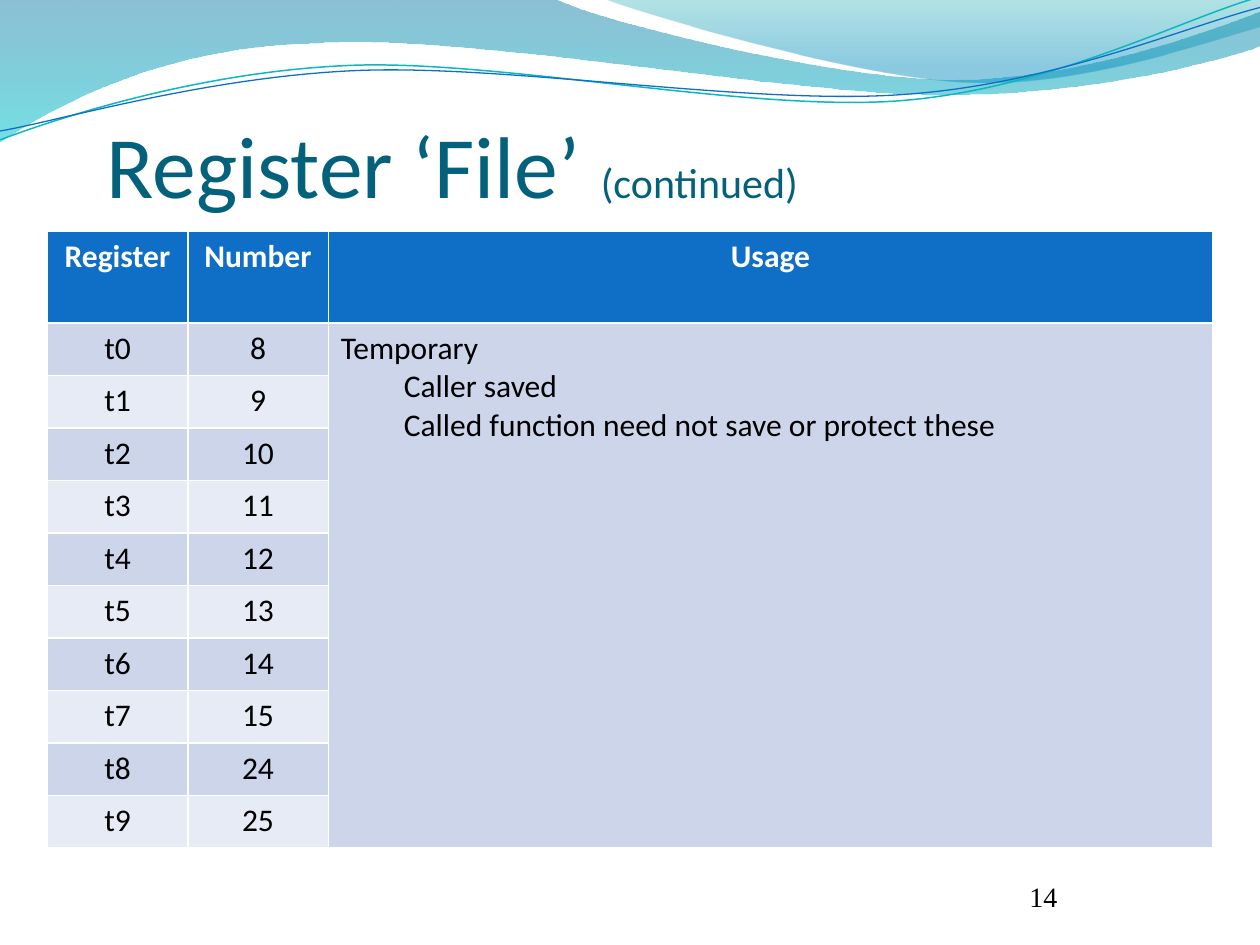
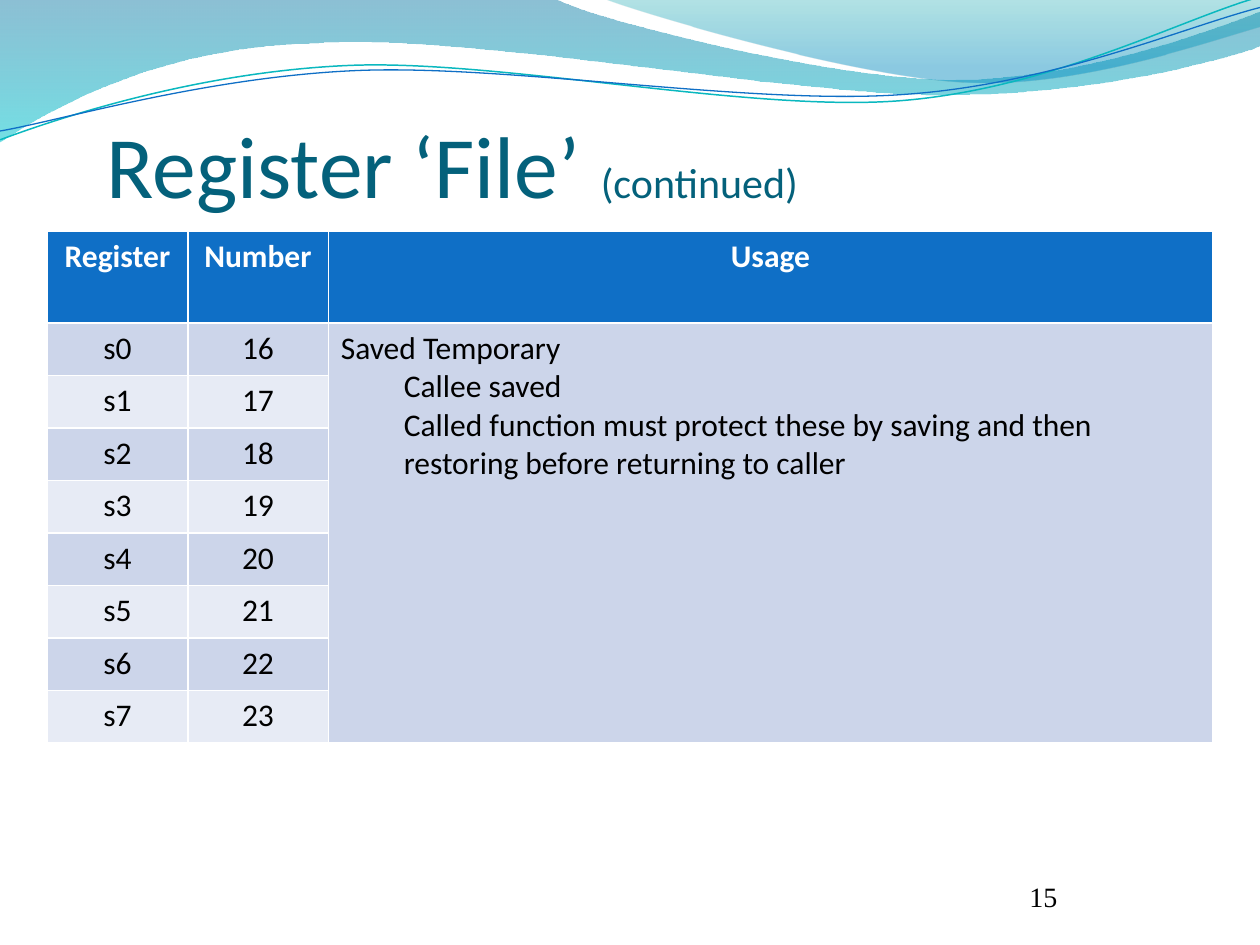
"""Build two slides listing the temporary and saved registers."""
from math import cos, radians, sin

from lxml import etree
from pptx import Presentation
from pptx.dml.color import RGBColor
from pptx.enum.text import MSO_ANCHOR, PP_ALIGN
from pptx.oxml.ns import qn
from pptx.util import Inches, Pt

BODY_FONT, NUMBER_FONT = "Calibri", "Times New Roman"
TITLE, BLUE, TEAL = "04617B", "0F6FC6", "0AB8BF"
WHITE, BLACK = "FFFFFF", "000000"
BANDS = ["CCD5EA", "E7EBF5"]
HEADINGS = ["Register", "Number", "Usage"]
TABLE_LEFT, TABLE_TOP, TABLE_WIDTH = 3 / 8, 11 / 6, 9.25
USAGE_WIDTH = 7.02
NARROW_WIDTH = (TABLE_WIDTH - USAGE_WIDTH) / 2
COLUMN_WIDTHS = [NARROW_WIDTH, NARROW_WIDTH, USAGE_WIDTH]
HEADER_HEIGHT, ROW_HEIGHT = 0.73, 5 / 12
UNITS_PER_INCH = 1000
CURVE_TILT = 2.7

WIDE_WAVE = [
    [(0, 0)], [(4.4, -0.01)],
    [(4.76, 0.17), (6.64, 0.63), (7.58, 0.63)],
    [(8.53, 0.63), (9.58, 0.26), (10, 0.09)],
    [(10.01, 0.36)],
    [(9.83, 0.44), (8.7, 0.76), (7.46, 0.75)],
    [(6.22, 0.75), (3.82, 0.28), (2.57, 0.34)],
    [(1.29, 0.36), (0.46, 0.83), (-0.01, 1.13)],
    [(0, 0)],
]
RIGHT_WAVE = [
    [(4.79, -0.01)],
    [(5.09, 0.11), (6.82, 0.62), (7.69, 0.65)],
    [(8.56, 0.69), (9.61, 0.32), (10, 0.21)],
    [(10, 0)], [(4.79, -0.01)],
]
TEAL_CURVE = [
    [(0, 1.11)],
    [(0.48, 0.93), (1.58, 0.57), (2.77, 0.52)],
    [(3.95, 0.47), (5.93, 0.89), (7.13, 0.8)],
    [(8.33, 0.71), (9.38, 0.15), (9.98, -0.02)],
]
BLUE_CURVE = [
    [(0, 1.04)],
    [(0.47, 0.96), (1.64, 0.61), (2.83, 0.56)],
    [(4.03, 0.51), (5.97, 0.84), (7.17, 0.75)],
    [(8.36, 0.67), (9.41, 0.21), (10, 0.06)],
]


def color(hex_text):
    """Return the colour for a hex string."""
    return RGBColor.from_string(hex_text)


def set_font(font, size, hex_text, name=BODY_FONT, bold=False):
    """Set the main properties of a font."""
    font.name, font.size, font.bold = name, Pt(size), bold
    font.color.rgb = color(hex_text)


def turn(segments, center, degrees):
    """Return the segments turned clockwise about a centre."""
    c, s = cos(radians(degrees)), sin(radians(degrees))
    mid_x, mid_y = center
    return [[(mid_x + (x - mid_x) * c - (y - mid_y) * s,
              mid_y + (x - mid_x) * s + (y - mid_y) * c) for x, y in segment]
            for segment in segments]


def add_outline(page, segments, close):
    """Add a freeform whose three-point segments are cubic curves."""
    scaled = [[(round(x * UNITS_PER_INCH), round(y * UNITS_PER_INCH)) for x, y in segment]
              for segment in segments]
    ends = [segment[-1] for segment in scaled]
    left, top = map(min, zip(*ends))
    builder = page.shapes.build_freeform(*ends[0], scale=Inches(1) / UNITS_PER_INCH)
    builder.add_line_segments(ends[1:], close=close)
    shape = builder.convert_to_shape()
    shape.shadow.inherit = False
    for node, segment in zip(list(shape.element.iter(qn("a:lnTo"))), scaled[1:]):
        if len(segment) == 3:
            node.tag = qn("a:cubicBezTo")
            for index, (x, y) in enumerate(segment[:2]):
                handle = node.makeelement(qn("a:pt"), x=str(x - left), y=str(y - top))
                node.insert(index, handle)
    return shape


def add_wave(page, segments, stops):
    """Add a wave with a see-through gradient running downwards."""
    shape = add_outline(page, segments, close=True)
    shape.line.fill.background()
    shape.fill.gradient()
    shape.fill.gradient_angle = 270
    for stop, (position, hex_text, _) in zip(shape.fill.gradient_stops, stops):
        stop.position = position
        stop.color.rgb = color(hex_text)
    paints = shape.element.spPr.iter(qn("a:srgbClr"))
    for paint, (_, _, opacity) in zip(paints, stops):
        etree.SubElement(paint, qn("a:alpha"), val=str(opacity * 1000))


def add_curve(page, segments, center, hex_text, width):
    """Add a thin curved line, tilted about its centre."""
    shape = add_outline(page, turn(segments, center, CURVE_TILT), close=False)
    shape.rotation = -CURVE_TILT
    shape.fill.background()
    shape.line.color.rgb = color(hex_text)
    shape.line.width = Pt(width)


def add_background(page):
    """Add the waves and curves at the top of the page."""
    add_wave(page, WIDE_WAVE, [(0, "0074A1", 45), (1, "00C6CF", 55)])
    add_wave(page, RIGHT_WAVE, [(0, "00A1A9", 30), (0.8, "008BBF", 45)])
    add_curve(page, TEAL_CURVE, (4.99, 0.58), TEAL, 0.85)
    add_curve(page, BLUE_CURVE, (5, 0.59), BLUE, 0.75)


def add_box(page, left, top, width, height):
    """Add a wrapping text box and return its frame."""
    box = page.shapes.add_textbox(*map(Inches, (left, top, width, height)))
    box.text_frame.word_wrap = True
    return box.text_frame


def add_page_number(page, number):
    """Add the page number at the lower right."""
    frame = add_box(page, 8.17, 6.83, 1.08, 0.42)
    frame.vertical_anchor = MSO_ANCHOR.BOTTOM
    frame.margin_left = frame.margin_right = 0
    frame.margin_top = frame.margin_bottom = 0
    frame.text = str(number)
    set_font(frame.paragraphs[0].font, 16, BLACK, NUMBER_FONT)


def add_title(page):
    """Add the title with its smaller suffix."""
    para = add_box(page, 0.75, 0.83, 8.5, 0.67).paragraphs[0]
    for text, size in (("Register ‘File’ ", 50), ("(continued)", 24)):
        span = para.add_run()
        span.text = text
        set_font(span.font, size, TITLE)


def fill_cell(cell, row):
    """Fill a cell with the colour for its row."""
    cell.fill.solid()
    cell.fill.fore_color.rgb = color(BANDS[(row - 1) % 2] if row else BLUE)


def write_cell(cell, text, header=False):
    """Write one centred line in a cell."""
    cell.text = text
    para = cell.text_frame.paragraphs[0]
    para.alignment = PP_ALIGN.CENTER
    set_font(para.font, 18, WHITE if header else BLACK, bold=header)


def write_usage(cell, lines):
    """Write a heading line followed by indented lines."""
    cell.text = "\n".join(lines)
    for index, para in enumerate(cell.text_frame.paragraphs):
        set_font(para.font, 18, BLACK)
        if index:
            para.level = 1
            indent = para._p.get_or_add_pPr()
            indent.set("marL", str(Inches(0.5)))
            indent.set("indent", "0")


def add_register_table(page, prefix, numbers, usage):
    """Add the table of registers with one merged usage cell."""
    count = len(numbers)
    table = page.shapes.add_table(
        count + 1, len(HEADINGS), Inches(TABLE_LEFT), Inches(TABLE_TOP),
        Inches(TABLE_WIDTH), Inches(HEADER_HEIGHT + count * ROW_HEIGHT)).table
    for column, width in zip(table.columns, COLUMN_WIDTHS):
        column.width = Inches(width)
    for index, row in enumerate(table.rows):
        row.height = Inches(ROW_HEIGHT if index else HEADER_HEIGHT)
        for cell in row.cells:
            fill_cell(cell, index)
    for column, heading in enumerate(HEADINGS):
        write_cell(table.cell(0, column), heading, header=True)
    for index, number in enumerate(numbers):
        write_cell(table.cell(index + 1, 0), f"{prefix}{index}")
        write_cell(table.cell(index + 1, 1), str(number))
    table.cell(1, 2).merge(table.cell(count, 2))
    write_usage(table.cell(1, 2), usage)


def add_register_page(deck, page_number, prefix, numbers, usage):
    """Add one complete register page."""
    page = deck.slides.add_slide(deck.slide_layouts[6])
    add_background(page)
    add_page_number(page, page_number)
    add_title(page)
    add_register_table(page, prefix, numbers, usage)


def main():
    """Build and save the deck."""
    deck = Presentation()
    deck.slide_width, deck.slide_height = Inches(10), Inches(7.5)
    add_register_page(deck, 14, "t", [*range(8, 16), 24, 25], [
        "Temporary",
        "Caller saved",
        "Called function need not save or protect these",
    ])
    add_register_page(deck, 15, "s", range(16, 24), [
        "Saved Temporary",
        "Callee saved",
        "Called function must protect these by saving and then "
        "restoring before returning to caller",
    ])
    deck.save("out.pptx")


if __name__ == "__main__":
    main()
